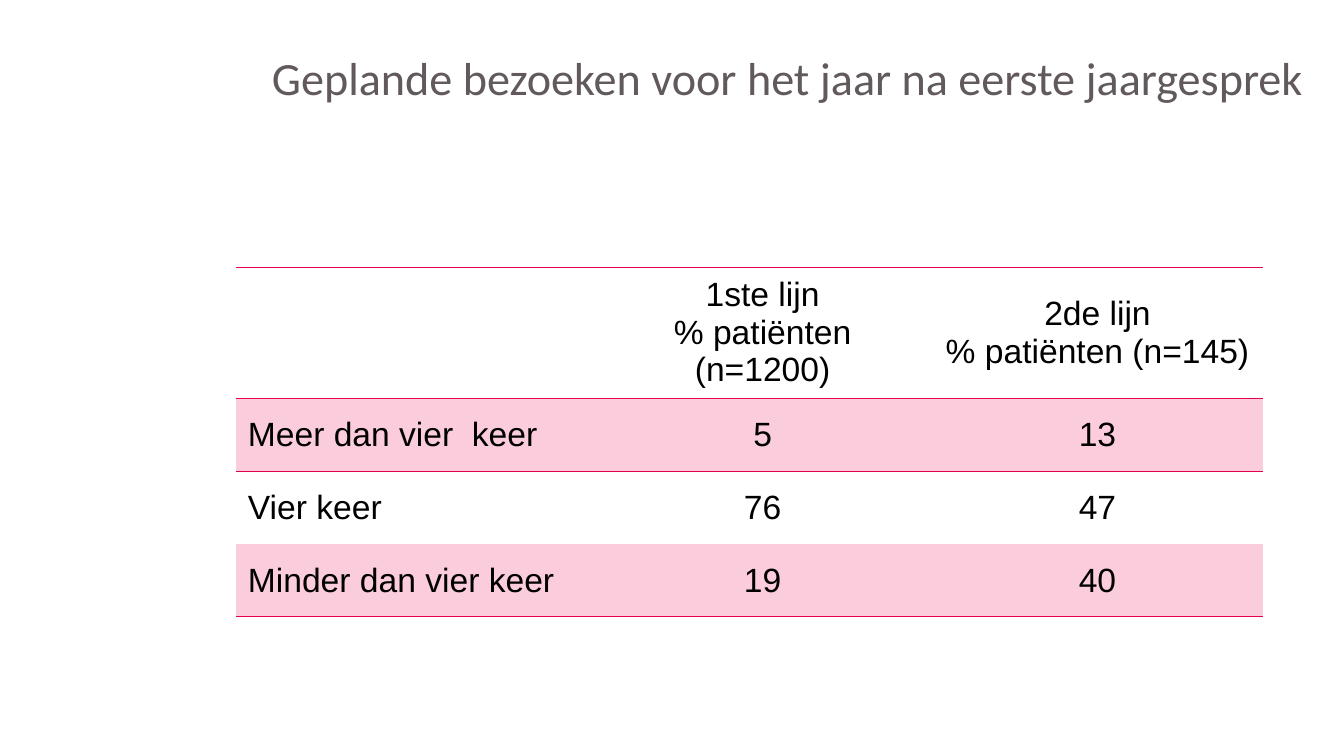
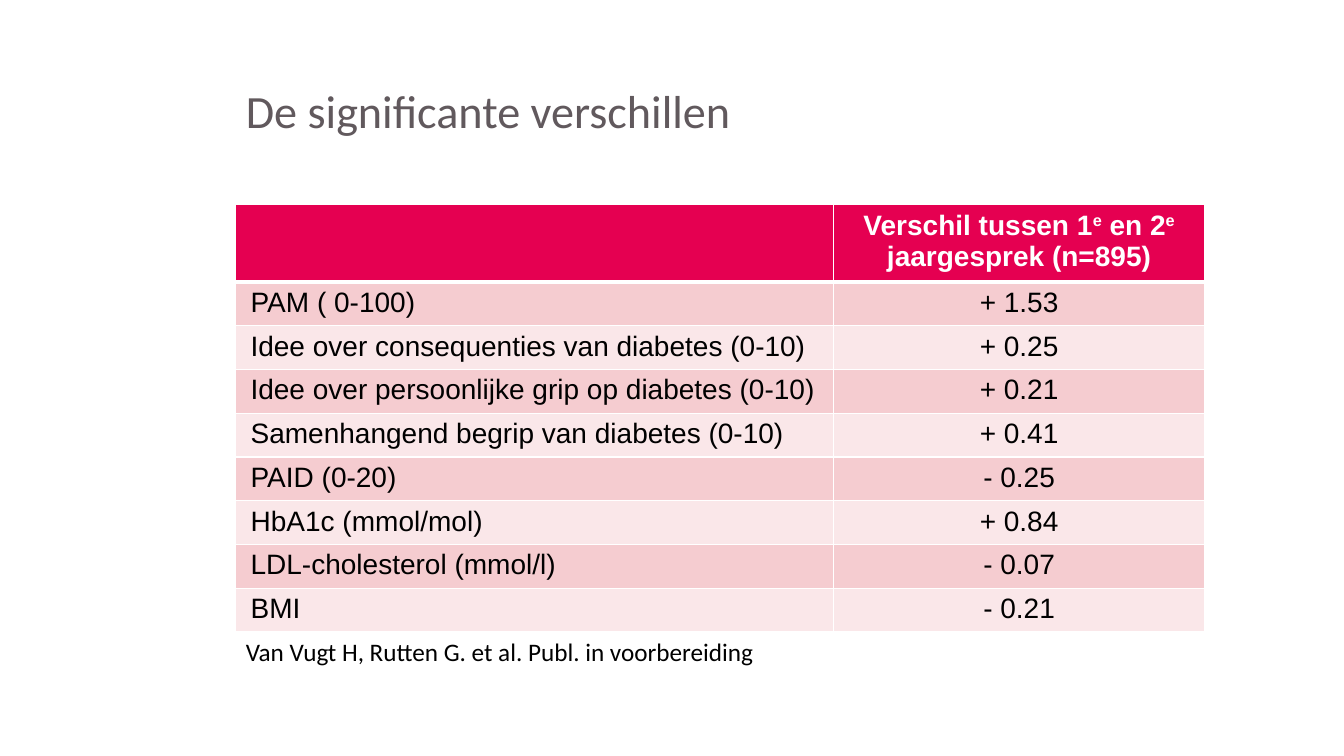
from collections import namedtuple

from lxml.etree import SubElement
from pptx import Presentation
from pptx.dml.color import RGBColor
from pptx.enum.text import MSO_ANCHOR as Anchor, PP_ALIGN as Align
from pptx.oxml.ns import qn
from pptx.util import Pt

Box = namedtuple("Box", "left top width height")
Style = namedtuple("Style", "size anchor margin_x")

PINK, ROSE = "E50051", "FACCDC"
BLUSH, PALE = "F5CCD0", "FAE7E9"
WHITE, BLACK, GREY = "FFFFFF", "000000", "61595D"
TITLE_FONT, TABLE_FONT = "Calibri", "Arial"
NO_STYLE = "{2D5ABB26-0587-4C30-8999-92F81FD0307C}"
TABLE_LEFT = 168.5

VISITS = [
    ("", "1ste lijn\n% patiënten (n=1200)", "2de lijn\n% patiënten (n=145)"),
    ("Meer dan vier  keer", "5", "13"),
    ("Vier keer", "76", "47"),
    ("Minder dan vier keer", "19", "40"),
]
# A caret puts the next character in superscript
DIFFERENCES = [
    ("", "Verschil tussen 1^e en 2^e jaargesprek (n=895)"),
    ("PAM ( 0-100)", "+ 1.53"),
    ("Idee over consequenties van diabetes (0-10)", "+ 0.25"),
    ("Idee over persoonlijke grip op diabetes (0-10)", "+ 0.21"),
    ("Samenhangend begrip van diabetes (0-10)", "+ 0.41"),
    ("PAID (0-20)", "- 0.25"),
    ("HbA1c (mmol/mol)", "+ 0.84"),
    ("LDL-cholesterol (mmol/l)", "- 0.07"),
    ("BMI", "- 0.21"),
]


def rgb(color):
    return RGBColor.from_string(color)


# Text
def add_run(para, text, font, size, color, bold=False, raised=False):
    span = para.add_run()
    span.text = text
    span.font.name, span.font.size, span.font.bold = font, Pt(size), bold
    span.font.color.rgb = rgb(color)
    if raised:
        span.font._element.set("baseline", "30000")


def add_text(page, box, text, size, color, anchor=Anchor.TOP, spacing=1.0):
    frame = page.shapes.add_textbox(*map(Pt, box)).text_frame
    frame.word_wrap = True
    frame.vertical_anchor = anchor
    para = frame.paragraphs[0]
    para.line_spacing = spacing
    add_run(para, text, TITLE_FONT, size, color)


def add_title(page, box, text, **layout):
    add_text(page, box, text, 33, GREY, **layout)


# Tables
def add_border(cell, side, color, width):
    line = SubElement(cell._tc.get_or_add_tcPr(), qn("a:ln" + side), w=str(Pt(width)))
    fill = SubElement(line, qn("a:solidFill"))
    SubElement(fill, qn("a:srgbClr"), val=color)


def fill_cell(cell, text, style, align, color, bold):
    cell.vertical_anchor = style.anchor
    cell.margin_left = cell.margin_right = Pt(style.margin_x)
    cell.margin_top = cell.margin_bottom = Pt(3.6)
    frame = cell.text_frame
    for number, line in enumerate(text.split("\n")):
        para = frame.add_paragraph() if number else frame.paragraphs[0]
        para.alignment = align
        first, *others = line.split("^")
        pieces = [(first, False)]
        for part in others:
            pieces += [(part[0], True), (part[1:], False)]
        for piece, raised in pieces:
            if piece:
                add_run(para, piece, TABLE_FONT, style.size, color, bold, raised)


def add_table(page, left, top, widths, heights, rows, style, look):
    """look(row) gives fill, text colour, bold and borders {side: (colour, width)}."""
    box = Box(left, top, sum(widths), sum(heights))
    frame = page.shapes.add_table(len(rows), len(widths), *map(Pt, box))
    table = frame.table
    table.first_row = table.horz_banding = False
    table._tbl.tblPr.find(qn("a:tableStyleId")).text = NO_STYLE
    for column, width in zip(table.columns, widths):
        column.width = Pt(width)
    for r, texts in enumerate(rows):
        table.rows[r].height = Pt(heights[r])
        fill, color, bold, borders = look(r)
        for c, text in enumerate(texts):
            cell = table.cell(r, c)
            fill_cell(cell, text, style, Align.CENTER if c else Align.LEFT, color, bold)
            for side in "LRTB":
                if side in borders:
                    add_border(cell, side, *borders[side])
            if fill:
                cell.fill.solid()
                cell.fill.fore_color.rgb = rgb(fill)
            else:
                cell.fill.background()


def visits_look(row):
    rule = (PINK, 1)
    borders = {0: {"T": rule, "B": rule}, 1: {"T": rule}, 3: {"B": rule}}
    return ROSE if row % 2 else None, BLACK, False, borders.get(row, {})


def differences_look(row):
    borders = {side: (WHITE, 1) for side in "LRTB"}
    if row < 2:
        borders["T" if row else "B"] = (WHITE, 3)
    if row == 0:
        return PINK, WHITE, True, borders
    return BLUSH if row % 2 else PALE, BLACK, False, borders


# Slides
def visits_slide(page):
    add_title(page, Box(187.2, 31.7, 773, 47.5),
              "Geplande bezoeken voor het jaar na eerste jaargesprek")
    add_table(page, TABLE_LEFT, 190.8, [255, 242.5, 236], [88] + [52.1] * 3,
              VISITS, Style(24, Anchor.MIDDLE, 8.6), visits_look)


def differences_slide(page):
    add_title(page, Box(TABLE_LEFT, 28.8, 733.7, 104.4), "De significante verschillen",
              anchor=Anchor.MIDDLE, spacing=0.9)
    add_table(page, TABLE_LEFT, 146.2, [427, 265], [51.8] + [29.5] * 8,
              DIFFERENCES, Style(20, Anchor.TOP, 10.5), differences_look)
    add_text(page, Box(TABLE_LEFT, 450.7, 440.6, 29),
             "Van Vugt H, Rutten G. et al. Publ. in voorbereiding", 18, BLACK)


def main():
    deck = Presentation()
    deck.slide_width, deck.slide_height = Pt(960), Pt(540)
    for build in (visits_slide, differences_slide):
        build(deck.slides.add_slide(deck.slide_layouts[6]))
    deck.save("out.pptx")


if __name__ == "__main__":
    main()
